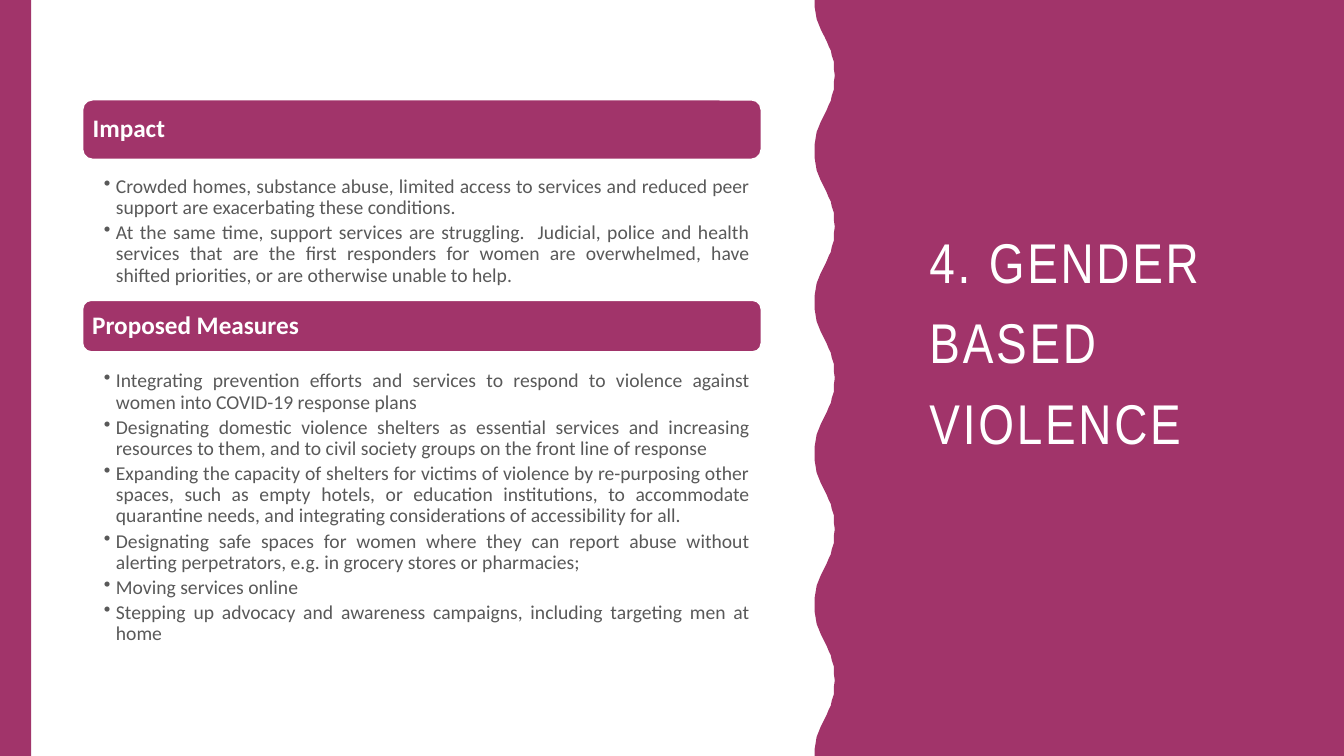
from lxml import etree
from pptx import Presentation
from pptx.dml.color import RGBColor
from pptx.enum.shapes import MSO_SHAPE as Preset
from pptx.enum.text import MSO_ANCHOR as Anchor, PP_ALIGN as Align
from pptx.oxml.ns import qn
from pptx.util import Inches, Pt

PLUM = RGBColor(0xA1, 0x34, 0x6A)
WHITE = RGBColor(0xFF, 0xFF, 0xFF)
GREY = RGBColor(0x59, 0x59, 0x59)

SLIDE_W, SLIDE_H = 13.33, 7.5
CONTENT_LEFT, CONTENT_W = 0.82, 6.73

# Wave edge: five crests, each half described by (distance from crest, x)
WAVE_COUNT = 5
WAVE_PITCH = SLIDE_H / WAVE_COUNT
HALF_WAVE = [
    (0, 8.28), (0.07, 8.27), (0.14, 8.27), (0.2, 8.25), (0.25, 8.24),
    (0.29, 8.22), (0.34, 8.2), (0.38, 8.18), (0.42, 8.16), (0.46, 8.14),
    (0.51, 8.12), (0.56, 8.1), (0.62, 8.09), (0.68, 8.08), (0.75, 8.08),
]

# Heading, heading top, heading height, bullets top, bullets height, bullets
SECTIONS = [
    ("Impact", 0.99, 0.59, 1.73, 1.18, [
        "Crowded homes, substance abuse, limited access to services and "
        "reduced peer support are exacerbating these conditions.",
        "At the same time, support services are struggling.  Judicial, police "
        "and health services that are the first responders for women are "
        "overwhelmed, have shifted priorities, or are otherwise unable to help.",
    ]),
    ("Proposed Measures", 2.98, 0.51, 3.66, 2.72, [
        "Integrating prevention efforts and services to respond to violence "
        "against women into COVID-19 response plans",
        "Designating domestic violence shelters as essential services and "
        "increasing resources to them, and to civil society groups on the "
        "front line of response",
        "Expanding the capacity of shelters for victims of violence by "
        "re-purposing other spaces, such as empty hotels, or education "
        "institutions, to accommodate quarantine needs, and integrating "
        "considerations of accessibility for all.",
        "Designating safe spaces for women where they can report abuse without "
        "alerting perpetrators, e.g. in grocery stores or pharmacies;",
        "Moving services online",
        "Stepping up advocacy and awareness campaigns, including targeting men "
        "at home",
    ]),
]


def paint(shape, line=None):
    shape.shadow.inherit = False
    shape.fill.solid()
    shape.fill.fore_color.rgb = PLUM
    if line is None:
        shape.line.fill.background()
    else:
        shape.line.color.rgb = line
        shape.line.width = Pt(1)


def set_frame(frame, left, top, right, bottom, anchor=Anchor.TOP):
    frame.word_wrap = True
    frame.vertical_anchor = anchor
    frame.margin_left, frame.margin_top = Inches(left), Inches(top)
    frame.margin_right, frame.margin_bottom = Inches(right), Inches(bottom)


def style(paragraph, font_name, size, color, spacing, bold=False):
    paragraph.line_spacing = spacing
    for run in paragraph.runs:
        run.font.name = font_name
        run.font.size = Pt(size)
        run.font.bold = bold
        run.font.color.rgb = color


def add_wave_panel(slide):
    edge = []
    for wave in range(WAVE_COUNT):
        crest = (wave + 0.5) * WAVE_PITCH
        edge += [(x, crest - gap) for gap, x in reversed(HALF_WAVE)]
        edge += [(x, crest + gap) for gap, x in HALF_WAVE[1:]]
    outline = [(SLIDE_W, 0), (SLIDE_W, SLIDE_H)] + edge[::-1]
    points = [(Inches(x), Inches(y)) for x, y in outline]
    builder = slide.shapes.build_freeform(*points[0])
    builder.add_line_segments(points[1:], close=True)
    paint(builder.convert_to_shape())


def add_side_bar(slide):
    bar = slide.shapes.add_shape(
        Preset.RECTANGLE, 0, 0, Inches(0.31), Inches(SLIDE_H))
    paint(bar)


def add_title(slide, text):
    title = slide.shapes.add_textbox(
        Inches(9.12), Inches(1.9), Inches(3.38), Inches(4.55))
    set_frame(title.text_frame, 0.1, 0.22, 0.1, 0.05)
    title.text_frame.text = text
    paragraph = title.text_frame.paragraphs[0]
    style(paragraph, "Arial Narrow", 40, WHITE, 1.2)
    # Letter spacing in hundredths of a point
    paragraph.runs[0].font._element.set("spc", "200")


def add_heading(slide, text, top, height):
    heading = slide.shapes.add_shape(
        Preset.ROUNDED_RECTANGLE, Inches(CONTENT_LEFT), Inches(top),
        Inches(CONTENT_W), Inches(height))
    paint(heading, line=WHITE)
    set_frame(heading.text_frame, 0.07, 0.07, 0.07, 0.07, Anchor.MIDDLE)
    heading.text_frame.text = text
    paragraph = heading.text_frame.paragraphs[0]
    paragraph.alignment = Align.LEFT
    style(paragraph, "Calibri", 18, WHITE, 0.9, bold=True)


def add_bullets(slide, items, top, height):
    box = slide.shapes.add_textbox(
        Inches(CONTENT_LEFT), Inches(top), Inches(CONTENT_W), Inches(height))
    frame = box.text_frame
    set_frame(frame, 0.21, 0.02, 0.11, 0.02)
    frame.text = "\n".join(items)
    for paragraph in frame.paragraphs:
        props = paragraph._p.get_or_add_pPr()
        props.set("marL", str(Inches(0.12)))
        props.set("indent", str(-Inches(0.12)))
        etree.SubElement(props, qn("a:buChar")).set("char", "•")
        paragraph.alignment = Align.JUSTIFY
        paragraph.space_after = Pt(2.8)
        style(paragraph, "Calibri", 14, GREY, 0.9)


def main():
    deck = Presentation()
    deck.slide_width, deck.slide_height = Inches(SLIDE_W), Inches(SLIDE_H)
    slide = deck.slides.add_slide(deck.slide_layouts[6])

    # Background panels and title
    add_wave_panel(slide)
    add_side_bar(slide)
    add_title(slide, "4. GENDER BASED VIOLENCE")

    # Headed bullet lists
    for heading, top, height, list_top, list_height, items in SECTIONS:
        add_heading(slide, heading, top, height)
        add_bullets(slide, items, list_top, list_height)

    deck.save("out.pptx")


if __name__ == "__main__":
    main()
